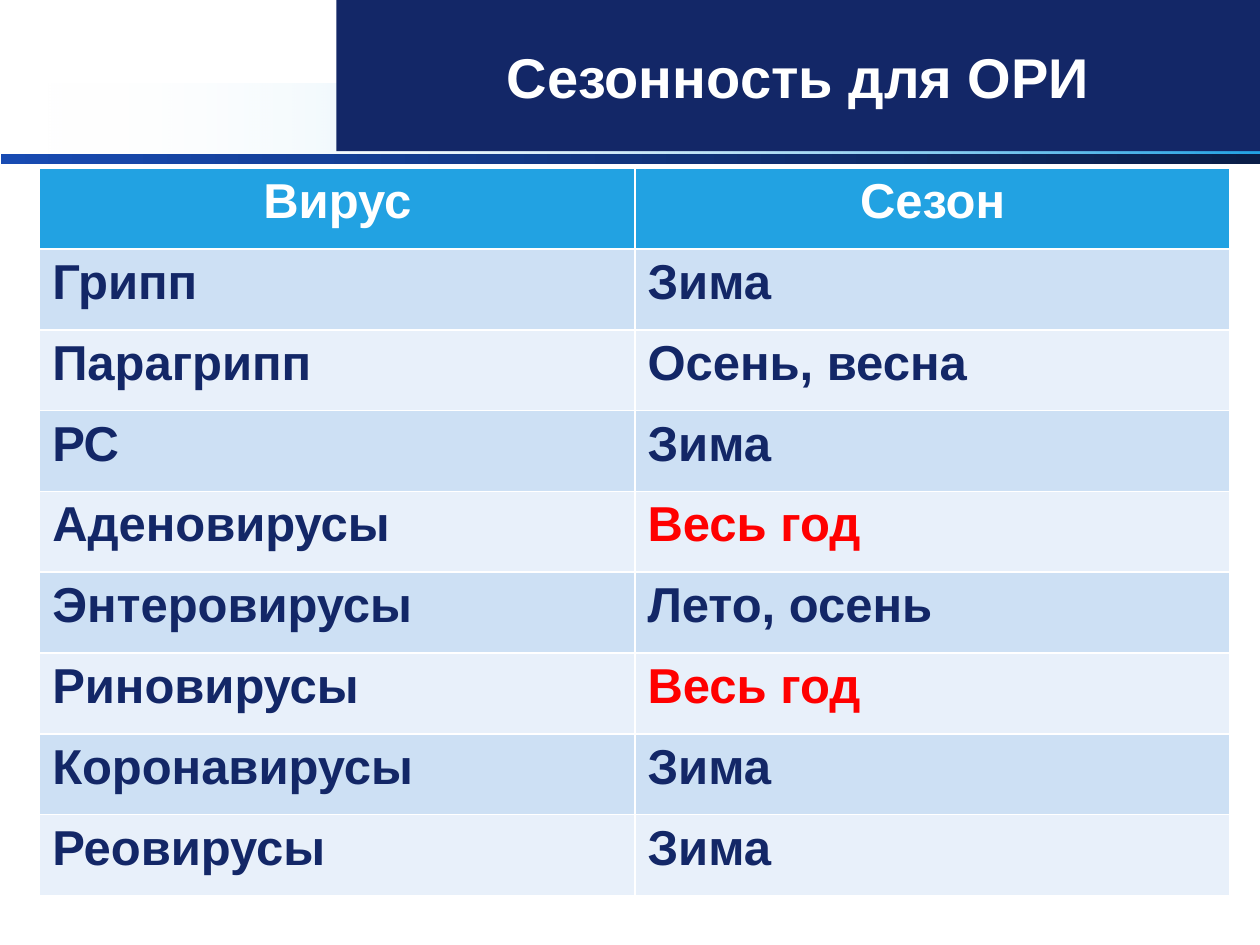
from dataclasses import dataclass

from lxml.etree import SubElement
from pptx import Presentation
from pptx.dml.color import RGBColor
from pptx.enum.shapes import MSO_SHAPE
from pptx.enum.text import MSO_ANCHOR, PP_ALIGN
from pptx.oxml.ns import qn
from pptx.util import Cm, Pt

NAVY = RGBColor(0x13, 0x27, 0x67)
BLUE = RGBColor(0x18, 0x4B, 0xB2)
DARK = RGBColor(0x0A, 0x1E, 0x48)
SKY = RGBColor(0x22, 0xA2, 0xE2)
PALE = RGBColor(0xCD, 0xE0, 0xF4)
MIST = RGBColor(0xE8, 0xF0, 0xFA)
RED = RGBColor(0xFF, 0, 0)
WHITE = RGBColor(0xFF, 0xFF, 0xFF)

ALL_YEAR = "Весь год"


@dataclass
class Band:
    left: float
    top: float
    width: float
    height: float
    start: RGBColor
    end: RGBColor
    fade: bool = False


@dataclass
class Virus:
    name: str
    season: str


BANDS = [
    Band(0.84, 1.69, 24.56, 1.48, WHITE, SKY, fade=True),
    Band(0.02, 3.1, 25.38, 0.2, BLUE, DARK),
]

VIRUSES = [
    Virus("Грипп", "Зима"),
    Virus("Парагрипп", "Осень, весна"),
    Virus("РС", "Зима"),
    Virus("Аденовирусы", ALL_YEAR),
    Virus("Энтеровирусы", "Лето, осень"),
    Virus("Риновирусы", ALL_YEAR),
    Virus("Коронавирусы", "Зима"),
    Virus("Реовирусы", "Зима"),
]


def style(para, size: int, color: RGBColor, align: PP_ALIGN) -> None:
    para.alignment = align
    font = para.font
    font.name = "Arial"
    font.size = Pt(size)
    font.bold = True
    font.color.rgb = color


def draw_band(slide, band: Band) -> None:
    """Draw a left-to-right gradient bar; fade makes its start transparent."""
    shape = slide.shapes.add_shape(
        MSO_SHAPE.RECTANGLE,
        Cm(band.left), Cm(band.top), Cm(band.width), Cm(band.height))
    shape.shadow.inherit = False
    shape.line.fill.background()
    shape.fill.gradient()
    shape.fill.gradient_angle = 0
    for stop, color in zip(shape.fill.gradient_stops, (band.start, band.end)):
        stop.color.rgb = color
    if band.fade:
        first = next(shape.element.iter(qn("a:srgbClr")))
        SubElement(first, qn("a:alpha"), val="0")


def draw_title(slide, text: str) -> None:
    title = slide.shapes.title
    title.left, title.top = Cm(6.78), Cm(0)
    title.width, title.height = Cm(18.62), Cm(3.05)
    title.fill.solid()
    title.fill.fore_color.rgb = NAVY
    frame = title.text_frame
    frame.text = text
    frame.vertical_anchor = MSO_ANCHOR.MIDDLE
    style(frame.paragraphs[0], 32, WHITE, PP_ALIGN.CENTER)
    # Bring the title in front of the bands
    title.element.getparent().append(title.element)


def fill_cell(cell, text: str, fill: RGBColor, color: RGBColor,
              align: PP_ALIGN = PP_ALIGN.LEFT) -> None:
    cell.fill.solid()
    cell.fill.fore_color.rgb = fill
    cell.text = text
    style(cell.text_frame.paragraphs[0], 28, color, align)


def draw_table(slide, heads: tuple[str, str], viruses: list[Virus]) -> None:
    count = len(viruses) + 1
    table = slide.shapes.add_table(
        count, len(heads), Cm(0.8), Cm(3.39), Cm(24), Cm(1.63 * count)).table
    for col, head in enumerate(heads):
        fill_cell(table.cell(0, col), head, SKY, WHITE, PP_ALIGN.CENTER)
    for row, virus in enumerate(viruses, 1):
        fill = PALE if row % 2 else MIST
        color = RED if virus.season == ALL_YEAR else NAVY
        fill_cell(table.cell(row, 0), virus.name, fill, NAVY)
        fill_cell(table.cell(row, 1), virus.season, fill, color)


def main() -> None:
    deck = Presentation()
    deck.slide_width, deck.slide_height = Cm(25.4), Cm(19.05)
    slide = deck.slides.add_slide(deck.slide_layouts[5])
    for band in BANDS:
        draw_band(slide, band)
    draw_title(slide, "Сезонность для ОРИ")
    draw_table(slide, ("Вирус", "Сезон"), VIRUSES)
    deck.save("out.pptx")


if __name__ == "__main__":
    main()
